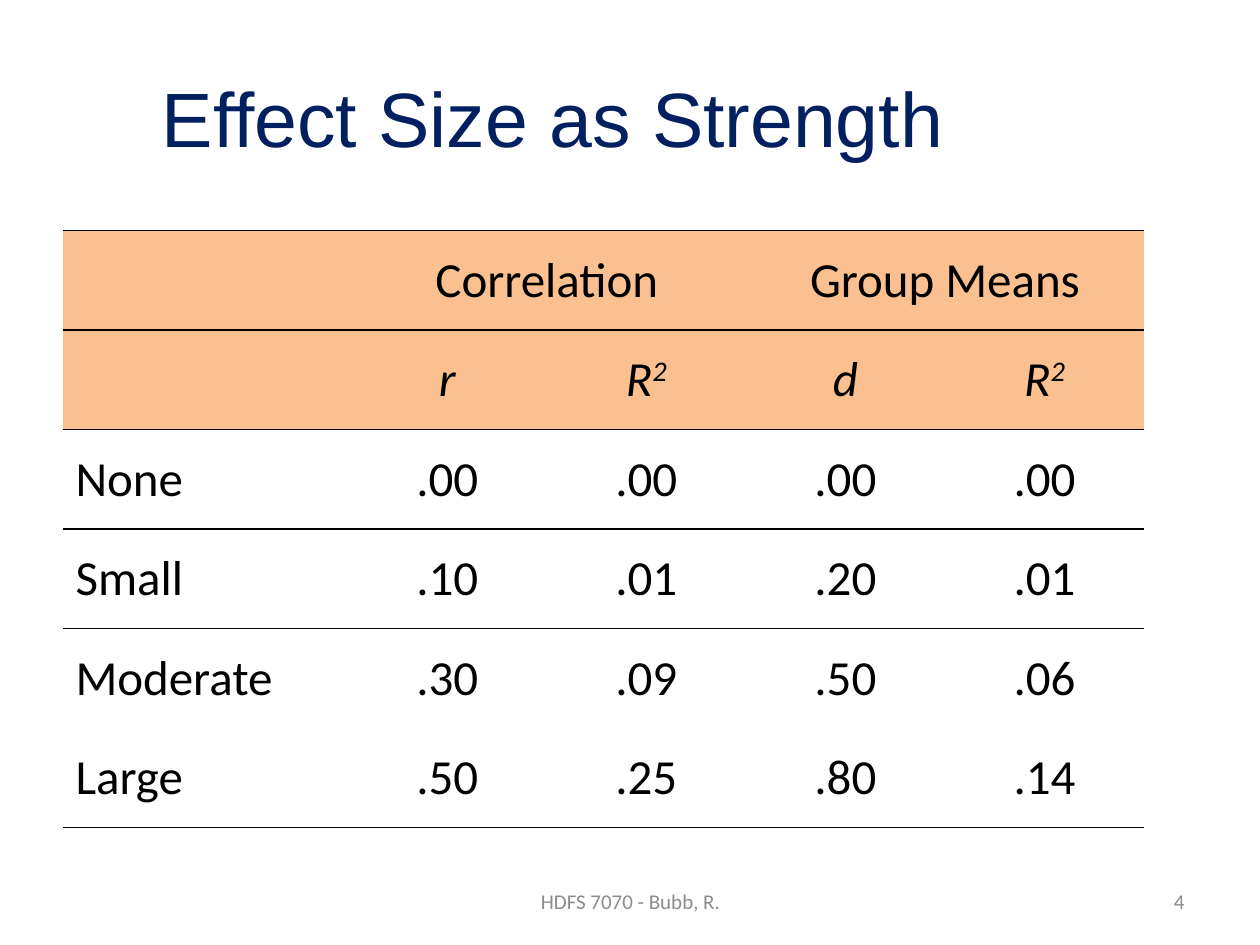
from lxml.etree import SubElement
from pptx import Presentation
from pptx.dml.color import RGBColor
from pptx.enum.text import MSO_ANCHOR as Anchor, PP_ALIGN as Align
from pptx.oxml.ns import qn
from pptx.util import Inches, Pt

COLORS = {"title": "002060", "footer": "8C8C8C", "text": "000000",
          "header": "FAC090", "rule": "000000"}
NO_STYLE = "{2D5ABB26-0587-4C30-8999-92F81FD0307C}"

HEADER_ROWS = 2
GROUPS = {1: "Correlation", 3: "Group Means"}
MEASURES = ["", "r", "R2", "d", "R2"]
EFFECTS = [
    ["None", ".00", ".00", ".00", ".00"],
    ["Small", ".10", ".01", ".20", ".01"],
    ["Moderate", ".30", ".09", ".50", ".06"],
    ["Large", ".50", ".25", ".80", ".14"],
]
RULED_BELOW = {0, 1, 2, 5}


class Deck:
    def __init__(self, prs):
        self.font, self.title_font = "Calibri", "Arial"
        self.s = prs.slides.add_slide(prs.slide_layouts[5])

    def style(self, p, size, color, align, font=None, italic=None):
        p.alignment = align
        p.font.name = font or self.font
        p.font.size = Pt(size)
        p.font.italic = italic
        p.font.color.rgb = RGBColor.from_string(COLORS[color])

    def title(self, text, x, y, w, h):
        sp = self.s.shapes.title
        sp.left, sp.top, sp.width, sp.height = map(Inches, (x, y, w, h))
        tf = sp.text_frame
        tf.text = text
        tf.vertical_anchor = Anchor.MIDDLE
        self.style(tf.paragraphs[0], 44, "title", Align.CENTER, self.title_font)

    def footer(self, text, x, y, w, h, align):
        tf = self.s.shapes.add_textbox(*map(Inches, (x, y, w, h))).text_frame
        tf.word_wrap = True
        tf.vertical_anchor = Anchor.MIDDLE
        tf.text = text
        self.style(tf.paragraphs[0], 12, "footer", align)

    def rule(self, cell, side):
        """Draw a 1 pt line on the top (lnT) or bottom (lnB) of a cell."""
        ln = SubElement(cell._tc.get_or_add_tcPr(), qn(f"a:{side}"), w=str(Pt(1)))
        fill = SubElement(ln, qn("a:solidFill"))
        SubElement(fill, qn("a:srgbClr"), val=COLORS["rule"])

    def cell(self, cell, text, row, col):
        if row == 0:
            self.rule(cell, "lnT")
        elif row - 1 in RULED_BELOW:
            self.rule(cell, "lnT")
        if row in RULED_BELOW:
            self.rule(cell, "lnB")
        if row < HEADER_ROWS:
            cell.fill.solid()
            cell.fill.fore_color.rgb = RGBColor.from_string(COLORS["header"])
        else:
            cell.fill.background()
        cell.vertical_anchor = Anchor.MIDDLE
        p = cell.text_frame.paragraphs[0]
        if text == "R2":
            p.add_run().text = "R"
            r = p.add_run()
            r.text = "2"
            r.font._element.set("baseline", "30000")
        elif text:
            p.add_run().text = text
        align = Align.CENTER if col else Align.LEFT
        self.style(p, 28, "text", align, italic=row == 1)

    def table(self, rows, x, y, widths, row_height):
        frame = self.s.shapes.add_table(
            len(rows), len(widths), Inches(x), Inches(y),
            Inches(sum(widths)), Inches(row_height * len(rows)))
        table = frame.table
        table.first_row = table.horz_banding = False
        table._tbl.tblPr.find(qn("a:tableStyleId")).text = NO_STYLE
        for column, width in zip(table.columns, widths):
            column.width = Inches(width)
        for i, texts in enumerate(rows):
            table.rows[i].height = Inches(row_height)
            for j, text in enumerate(texts):
                self.cell(table.cell(i, j), text, i, j)
        for j in GROUPS:
            table.cell(0, j).merge(table.cell(0, j + 1))


def main():
    prs = Presentation()
    prs.slide_width, prs.slide_height = Inches(10), Inches(7.5)
    deck = Deck(prs)
    deck.title("Effect Size as Strength", 0.5, 0.3, 7.78, 1.25)
    deck.footer("HDFS 7070 - Bubb, R.", 3.42, 6.95, 3.17, 0.4, Align.CENTER)
    deck.footer("4", 7.17, 6.95, 2.33, 0.4, Align.RIGHT)
    group_row = [GROUPS.get(j, "") for j in range(len(MEASURES))]
    deck.table([group_row, MEASURES, *EFFECTS], 0.5, 1.83,
               [2.26] + [1.58] * 4, 0.79)
    prs.save("out.pptx")


if __name__ == "__main__":
    main()
